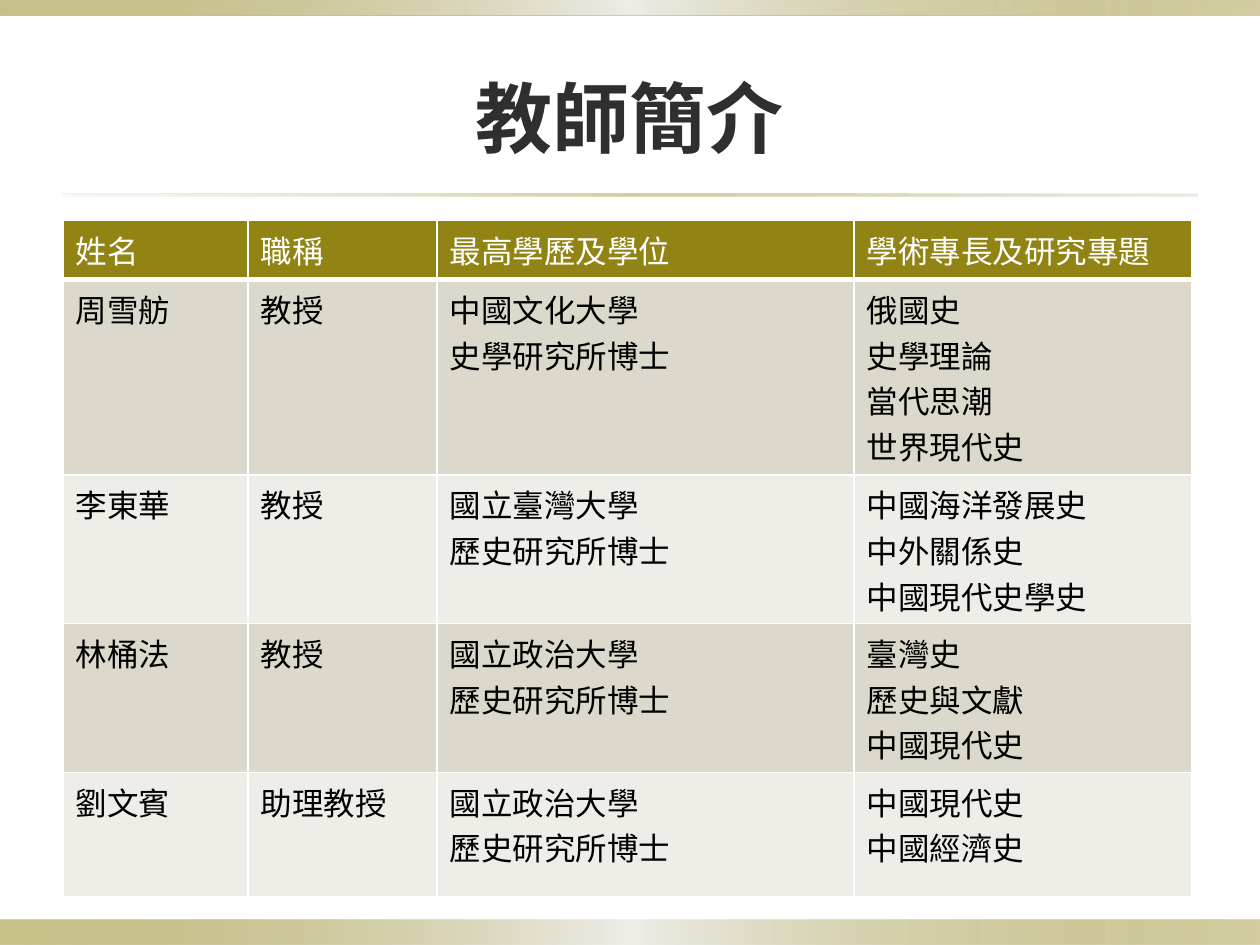
from pptx import Presentation
from pptx.dml.color import RGBColor
from pptx.enum.shapes import MSO_SHAPE
from pptx.enum.text import MSO_ANCHOR, PP_ALIGN
from pptx.oxml import parse_xml
from pptx.oxml.ns import nsdecls, qn
from pptx.util import Inches, Pt
from lxml import etree

RECTANGLE = MSO_SHAPE.RECTANGLE
MIDDLE = MSO_ANCHOR.MIDDLE
CENTER = PP_ALIGN.CENTER

COLORS = {"olive": "918415", "sand": "DCD9CC", "pale": "EEEDE8",
          "white": "FFFFFF", "black": "000000", "title": "2F2F2F"}
CJK_FONT = "Noto Sans CJK SC"

TITLE = "教師簡介"
HEADER = ("姓名", "職稱", "最高學歷及學位", "學術專長及研究專題")
TEACHERS = [
    ("周雪舫", "教授", "中國文化大學\n史學研究所博士",
     "俄國史\n史學理論\n當代思潮\n世界現代史"),
    ("李東華", "教授", "國立臺灣大學\n歷史研究所博士",
     "中國海洋發展史\n中外關係史\n中國現代史學史"),
    ("林桶法", "教授", "國立政治大學\n歷史研究所博士",
     "臺灣史\n歷史與文獻\n中國現代史"),
    ("劉文賓", "助理教授", "國立政治大學\n歷史研究所博士",
     "中國現代史\n中國經濟史"),
]
COLUMN_WIDTHS = (1.47, 1.5, 3.31, 2.68)
ROW_HEIGHTS = (0.47, 1.55, 1.18, 1.18, 0.99)

# Gradient stops: position %, colour, opacity %
BAND_STOPS = [(0, "olive", 50), (50, "pale", 100), (100, "olive", 40)]
RULE_STOPS = [(0, "sand", 20), (50, "olive", 40), (100, "sand", 50)]
STRIPS = [((0, 7.3, 10, 0.2), BAND_STOPS),
          ((0, 0, 10, 0.12), BAND_STOPS),
          ((0.5, 1.54, 9, 0.02), RULE_STOPS)]

TITLE_FORMAT = {"size": Pt(44), "bold": True, "name": CJK_FONT}
HEADER_FORMAT = {"size": Pt(18), "bold": False, "name": "Roboto"}
BODY_FORMAT = {"size": Pt(18), "bold": False, "name": CJK_FONT}


def add_strip(slide, place, stops):
    strip = slide.shapes.add_shape(RECTANGLE, *map(Inches, place))
    strip.shadow.inherit = False
    strip.line.fill.background()
    stop_xml = "".join(
        f'<a:gs pos="{position * 1000}"><a:srgbClr val="{COLORS[color]}">'
        f'<a:alpha val="{opacity * 1000}"/></a:srgbClr></a:gs>'
        for position, color, opacity in stops)
    gradient = parse_xml(f'<a:gradFill {nsdecls("a")} rotWithShape="1"><a:gsLst>{stop_xml}'
                         '</a:gsLst><a:lin ang="0" scaled="0"/></a:gradFill>')
    strip._element.spPr.find(qn("a:prstGeom")).addnext(gradient)


def write_text(para, text, font_format, color):
    para.text = text
    for span in para.runs:
        for name, value in font_format.items():
            setattr(span.font, name, value)
        span.font.color.rgb = RGBColor.from_string(COLORS[color])
        east_asian = etree.SubElement(span.font._element, qn("a:ea"))
        east_asian.set("typeface", CJK_FONT)


def add_borders(cell, bottom_width):
    """Draw white lines on all four sides, ahead of the cell fill."""
    properties = cell._tc.get_or_add_tcPr()
    widths = {"lnL": 1, "lnR": 1, "lnT": 1, "lnB": bottom_width}
    for index, (side, width) in enumerate(widths.items()):
        properties.insert(index, parse_xml(
            f'<a:{side} {nsdecls("a")} w="{Pt(width)}"><a:solidFill>'
            f'<a:srgbClr val="{COLORS["white"]}"/></a:solidFill></a:{side}>'))


def add_title(slide):
    box = slide.shapes.add_textbox(Inches(0.5), Inches(0.3), Inches(9), Inches(1.25))
    frame = box.text_frame
    frame.word_wrap = True
    frame.vertical_anchor = MIDDLE
    para = frame.paragraphs[0]
    para.alignment = CENTER
    write_text(para, TITLE, TITLE_FORMAT, "title")


def add_teacher_table(slide):
    rows = [HEADER, *TEACHERS]
    table = slide.shapes.add_table(
        len(rows), len(HEADER), Inches(0.5), Inches(1.75),
        Inches(sum(COLUMN_WIDTHS)), Inches(sum(ROW_HEIGHTS))).table
    for column, width in zip(table.columns, COLUMN_WIDTHS):
        column.width = Inches(width)
    for row_index, texts in enumerate(rows):
        table.rows[row_index].height = Inches(ROW_HEIGHTS[row_index])
        if row_index == 0:
            fill, color, font_format, bottom = "olive", "white", HEADER_FORMAT, 3
        else:
            fill = "sand" if row_index % 2 else "pale"
            color, font_format, bottom = "black", BODY_FORMAT, 1
        for column_index, text in enumerate(texts):
            cell = table.cell(row_index, column_index)
            cell.fill.solid()
            cell.fill.fore_color.rgb = RGBColor.from_string(COLORS[fill])
            add_borders(cell, bottom)
            write_text(cell.text_frame.paragraphs[0], text, font_format, color)


def main():
    deck = Presentation()
    deck.slide_width, deck.slide_height = Inches(10), Inches(7.5)
    slide = deck.slides.add_slide(deck.slide_layouts[6])
    for place, stops in STRIPS:
        add_strip(slide, place, stops)
    add_title(slide)
    add_teacher_table(slide)
    deck.save("out.pptx")


if __name__ == "__main__":
    main()
